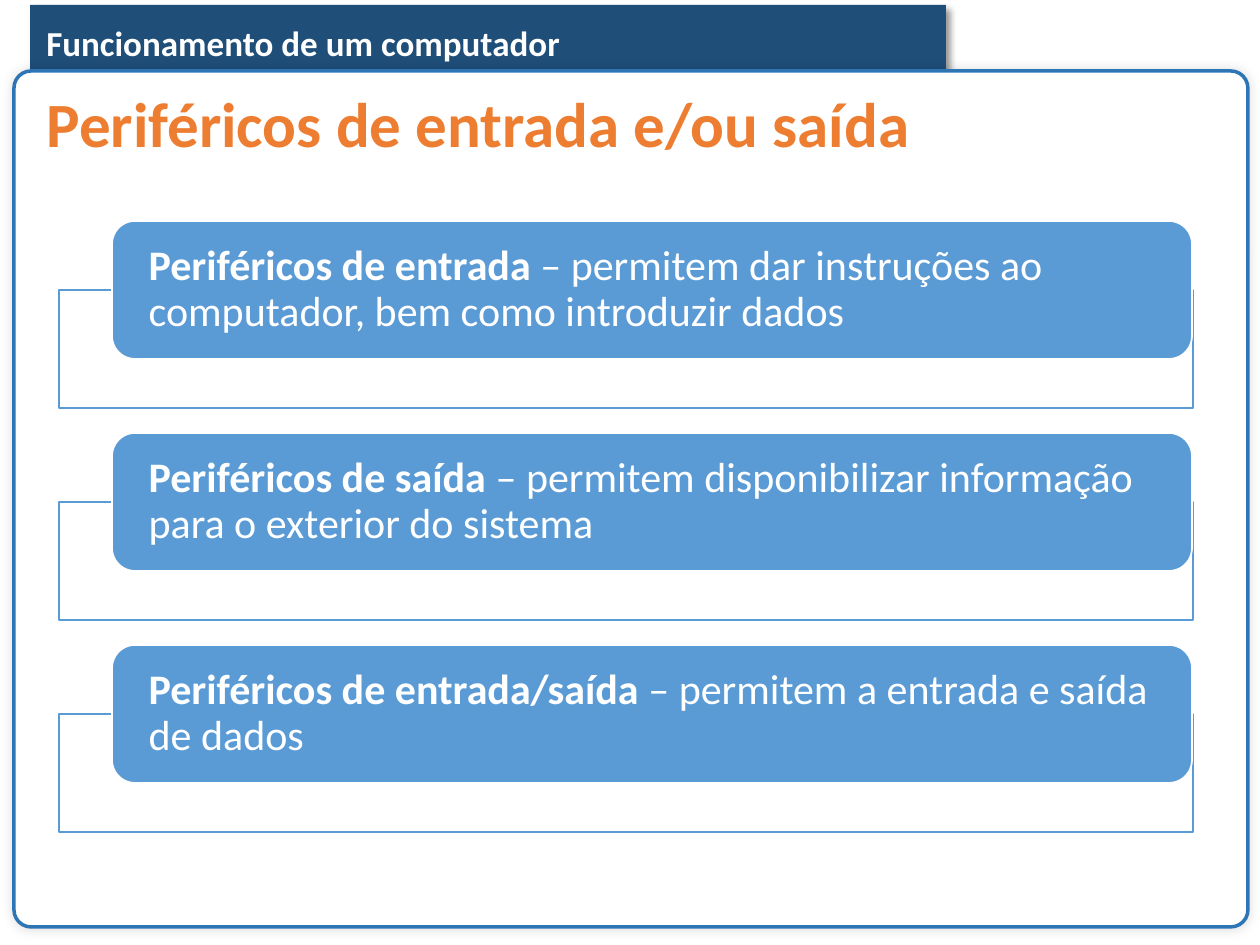
from lxml.etree import SubElement
from pptx import Presentation
from pptx.dml.color import RGBColor
from pptx.enum.shapes import MSO_SHAPE as Shape
from pptx.enum.text import MSO_ANCHOR as Anchor, MSO_AUTO_SIZE as AutoSize, PP_ALIGN as Align
from pptx.oxml.ns import qn
from pptx.util import Pt

PX = 914400 / 126
FONT = "Calibri"
COLORS = {
    "navy": "1F4E79",
    "border": "2E75B6",
    "blue": "5B9BD5",
    "orange": "ED7D31",
    "white": "FFFFFF",
    "black": "000000",
}
ROW_TOP, ROW_PITCH = 221, 212
PERIPHERALS = [
    ("Periféricos de entrada ",
     "– permitem dar instruções ao computador, bem como introduzir dados"),
    ("Periféricos de saída ",
     "– permitem disponibilizar informação para o exterior do sistema"),
    ("Periféricos de entrada/saída ",
     "– permitem a entrada e saída de dados"),
]


def px(n):
    return round(n * PX)


def rgb(name):
    return RGBColor.from_string(COLORS[name])


def add_box(s, kind, box, fill, line=None, width=1):
    sp = s.shapes.add_shape(kind, *map(px, box))
    sp.shadow.inherit = False
    sp.fill.solid()
    sp.fill.fore_color.rgb = rgb(fill)
    if line:
        sp.line.color.rgb = rgb(line)
        sp.line.width = Pt(width)
    else:
        sp.line.fill.background()
    return sp


def set_alpha(color, percent):
    SubElement(color, qn("a:alpha"), val=str(percent * 1000))


def add_shadow(sp, alpha, blur, dist=0, angle=0):
    effects = sp.element.spPr.find(qn("a:effectLst"))
    shadow = SubElement(effects, qn("a:outerShdw"), blurRad=str(Pt(blur)),
                        dist=str(Pt(dist)), dir=str(angle * 60000), rotWithShape="0")
    set_alpha(SubElement(shadow, qn("a:srgbClr"), val=COLORS["black"]), alpha)


def style_run(r, size, color, bold=True):
    r.font.name = FONT
    r.font.size = Pt(size)
    r.font.bold = bold
    r.font.color.rgb = rgb(color)


def add_header(s, text):
    bar = add_box(s, Shape.RECTANGLE, (30, 5, 916, 78), "navy")
    add_shadow(bar, 40, 4, 3, 45)
    tf = s.shapes.add_textbox(*map(px, (34, 8, 945, 59))).text_frame
    tf.word_wrap = True
    tf.text = text
    p = tf.paragraphs[0]
    p.line_spacing = Pt(28.1)
    style_run(p.runs[0], 20, "white")


def add_panel(s):
    panel = add_box(s, Shape.ROUNDED_RECTANGLE, (14, 71, 1234, 856), "white", "border", 2)
    panel.adjustments[0] = 0.02
    add_shadow(panel, 13, 6)


def add_peripheral(s, top, name, description):
    frame = add_box(s, Shape.RECTANGLE, (59, top + 69, 1134, 118), "white", "blue")
    set_alpha(frame.element.spPr.find(qn("a:solidFill"))[0], 90)
    pill = add_box(s, Shape.ROUNDED_RECTANGLE, (112, top, 1080, 138), "blue", "white")
    tf = pill.text_frame
    tf.word_wrap = True
    tf.vertical_anchor = Anchor.MIDDLE
    tf.margin_left = tf.margin_right = px(30)
    tf.margin_top = tf.margin_bottom = 0
    p = tf.paragraphs[0]
    p.alignment = Align.LEFT
    p.line_spacing = 0.9
    for text, bold in ((name, True), (description, False)):
        r = p.add_run()
        r.text = text
        style_run(r, 24, "white", bold)


def set_title(s, text):
    """Fill the title placeholder and bring it in front of the panel."""
    title = s.shapes.title
    title.left, title.top, title.width, title.height = map(px, (34, 87, 1159, 83))
    tf = title.text_frame
    tf.text = text
    tf.word_wrap = True
    tf.auto_size = AutoSize.NONE
    tf.vertical_anchor = Anchor.TOP
    p = tf.paragraphs[0]
    p.alignment = Align.LEFT
    p.line_spacing = 0.9
    style_run(p.runs[0], 36, "orange")
    title.element.getparent().append(title.element)


def main():
    prs = Presentation()
    prs.slide_width, prs.slide_height = px(1260), px(945)
    s = prs.slides.add_slide(prs.slide_layouts[5])
    add_header(s, "Funcionamento de um computador")
    add_panel(s)
    for i, (name, description) in enumerate(PERIPHERALS):
        add_peripheral(s, ROW_TOP + i * ROW_PITCH, name, description)
    set_title(s, "Periféricos de entrada e/ou saída")
    prs.save("out.pptx")


if __name__ == "__main__":
    main()
